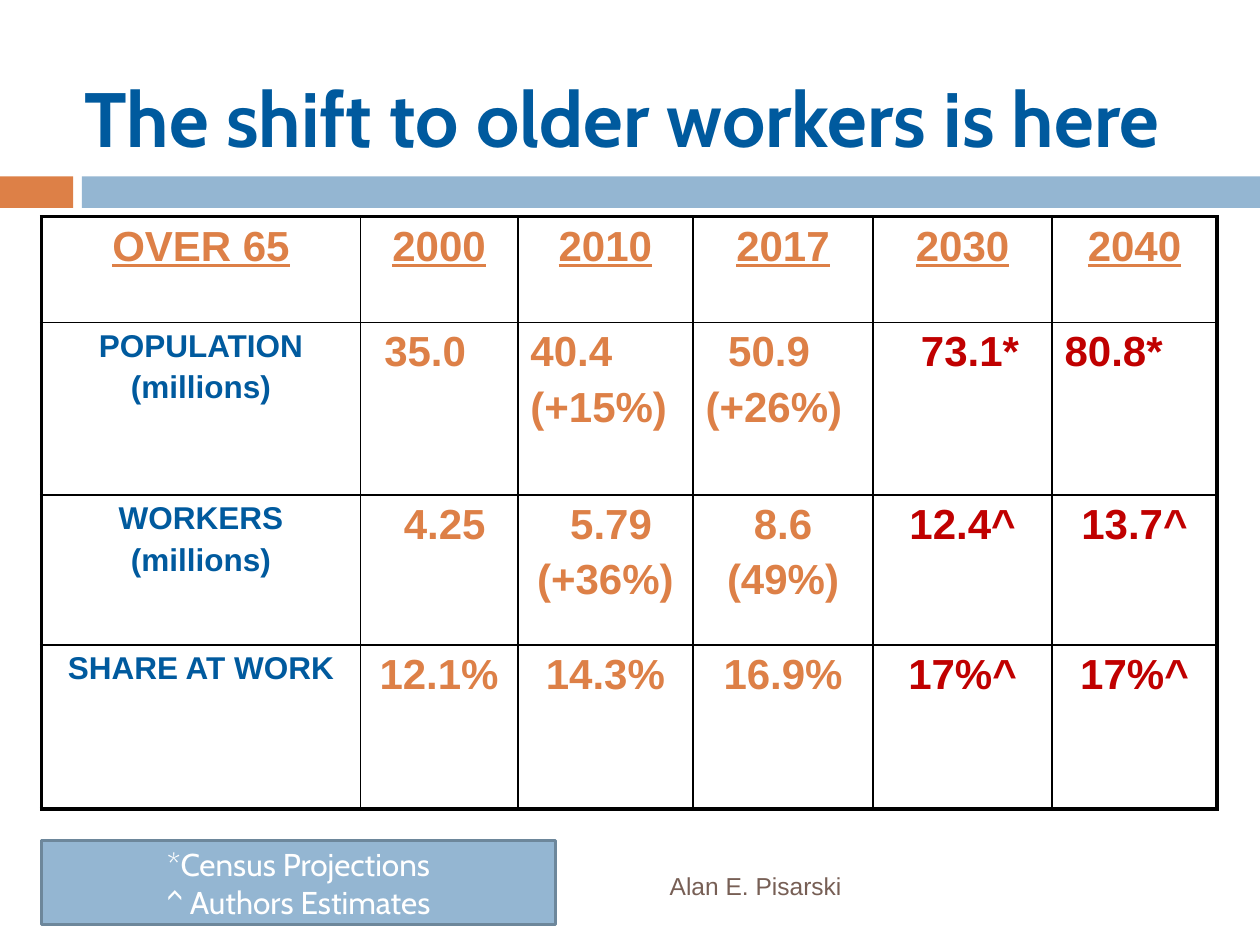
from lxml import etree
from pptx import Presentation
from pptx.dml.color import RGBColor
from pptx.enum import shapes, text
from pptx.oxml import ns
from pptx.util import Inches, Pt

BLUE = RGBColor(0x00, 0x5A, 0x9E)
ORANGE = RGBColor(0xDD, 0x80, 0x47)
RED = RGBColor(0xC0, 0x00, 0x00)
SKY = RGBColor(0x94, 0xB6, 0xD2)
SLATE = RGBColor(0x6D, 0x87, 0x9B)
BROWN = RGBColor(0x77, 0x5F, 0x55)
WHITE = RGBColor(0xFF, 0xFF, 0xFF)

LEFT, CENTER, RIGHT = (text.PP_ALIGN.LEFT, text.PP_ALIGN.CENTER,
                       text.PP_ALIGN.RIGHT)

COLUMN_WIDTHS = [2.53, 1.25, 1.39, 1.43, 1.42, 1.31]
ROW_HEIGHTS = [0.84, 1.37, 1.19, 1.3]
ROWS = [
    ["OVER 65", "2000", "2010", "2017", "2030", "2040"],
    ["POPULATION\n(millions)", "35.0", "40.4\n(+15%)", "50.9\n(+26%)",
     "73.1*", "80.8*"],
    ["WORKERS\n(millions)", "4.25", "5.79\n(+36%)", "8.6\n(49%)",
     "12.4^", "13.7^"],
    ["SHARE AT WORK", "12.1%", "14.3%", "16.9%", "17%^", "17%^"],
]
# Indent of the first line of some figures, by (row, column)
INDENTS = {(1, 1): 0.09, (1, 3): 0.18, (1, 4): 0.28, (2, 1): 0.09, (2, 2): 0.09}


def write(frame, lines, align, size, color, font="Arial", **font_values):
    values = {"name": font, "size": Pt(size), **font_values}
    for index, line in enumerate(lines):
        paragraph = frame.paragraphs[0] if index == 0 else frame.add_paragraph()
        paragraph.alignment = align
        run = paragraph.add_run()
        run.text = line
        for name, value in values.items():
            setattr(run.font, name, value)
        run.font.color.rgb = color


def add_bar(slide, left, top, width, height, fill, line=None):
    bar = slide.shapes.add_shape(
        shapes.MSO_SHAPE.RECTANGLE,
        Inches(left), Inches(top), Inches(width), Inches(height))
    bar.shadow.inherit = False
    bar.fill.solid()
    bar.fill.fore_color.rgb = fill
    if line is None:
        bar.line.fill.background()
    else:
        bar.line.color.rgb = line
        bar.line.width = Pt(1.5)
    return bar


def add_label(slide, left, top, width, height, margins):
    frame = slide.shapes.add_textbox(
        Inches(left), Inches(top), Inches(width), Inches(height)).text_frame
    frame.word_wrap = True
    frame.vertical_anchor = text.MSO_ANCHOR.MIDDLE
    for side, margin in margins.items():
        setattr(frame, "margin_" + side, Inches(margin))
    return frame


def set_borders(cell, outer_sides):
    properties = cell._tc.get_or_add_tcPr()
    for index, side in enumerate("LRTB"):
        width = Pt(2.25 if side in outer_sides else 1)
        border = etree.Element(ns.qn("a:ln" + side), w=str(width))
        fill = etree.SubElement(border, ns.qn("a:solidFill"))
        etree.SubElement(fill, ns.qn("a:srgbClr"), val="000000")
        properties.insert(index, border)


def fill_cell(cell, row, column):
    last_row, last_column = len(ROWS) - 1, len(COLUMN_WIDTHS) - 1
    # Headings and row labels have their own looks, projections are red
    size, color = 24, ORANGE
    if row > 0 and column == 0:
        size, color = 18, BLUE
    elif row > 0 and column >= 4:
        color = RED
    align = LEFT if row == 1 and column > 0 else CENTER
    write(cell.text_frame, ROWS[row][column].split("\n"), align, size, color,
          bold=True, underline=row == 0)
    for paragraph in cell.text_frame.paragraphs:
        paragraph.space_before = Pt(0.2 * size)
    if (row, column) in INDENTS:
        first = cell.text_frame.paragraphs[0]._p.get_or_add_pPr()
        first.set("marL", str(Inches(INDENTS[row, column])))

    cell.fill.background()
    edges = {"L": column == 0, "R": column == last_column,
             "T": row == 0, "B": row == last_row}
    set_borders(cell, [side for side, outer in edges.items() if outer])


def add_worker_table(slide):
    table = slide.shapes.add_table(
        len(ROWS), len(COLUMN_WIDTHS), Inches(0.33), Inches(1.72),
        Inches(sum(COLUMN_WIDTHS)), Inches(sum(ROW_HEIGHTS))).table
    table.first_row = table.horz_banding = False
    for column, width in zip(table.columns, COLUMN_WIDTHS):
        column.width = Inches(width)
    for row, height in zip(table.rows, ROW_HEIGHTS):
        row.height = Inches(height)
    for row in range(len(ROWS)):
        for column in range(len(COLUMN_WIDTHS)):
            fill_cell(table.cell(row, column), row, column)


def main():
    deck = Presentation()
    deck.slide_width, deck.slide_height = Inches(10), Inches(7.5)
    slide = deck.slides.add_slide(deck.slide_layouts[6])

    # Band under the title
    add_bar(slide, 0, 1.4, 0.58, 0.25, ORANGE)
    add_bar(slide, 0.65, 1.4, 9.35, 0.25, SKY)

    # Title
    title = add_label(slide, 0.17, 0.3, 9.67, 1.25, {"left": 0.5, "right": 0})
    write(title, ["The shift to older workers is here"], LEFT, 44, BLUE,
          font="Cabin", bold=True)

    # Figures
    add_worker_table(slide)

    # Author and key to the marks
    author = add_label(slide, 0.67, 6.83, 6.17, 0.4, {"right": 0.16})
    write(author, ["Alan E. Pisarski"], RIGHT, 14, BROWN)
    key = add_bar(slide, 0.33, 6.67, 4.08, 0.67, SKY, SLATE).text_frame
    key.vertical_anchor = text.MSO_ANCHOR.MIDDLE
    write(key, ["*Census Projections", "^ Authors Estimates"], CENTER, 18,
          WHITE, font="Cabin")

    deck.save("out.pptx")


if __name__ == "__main__":
    main()
